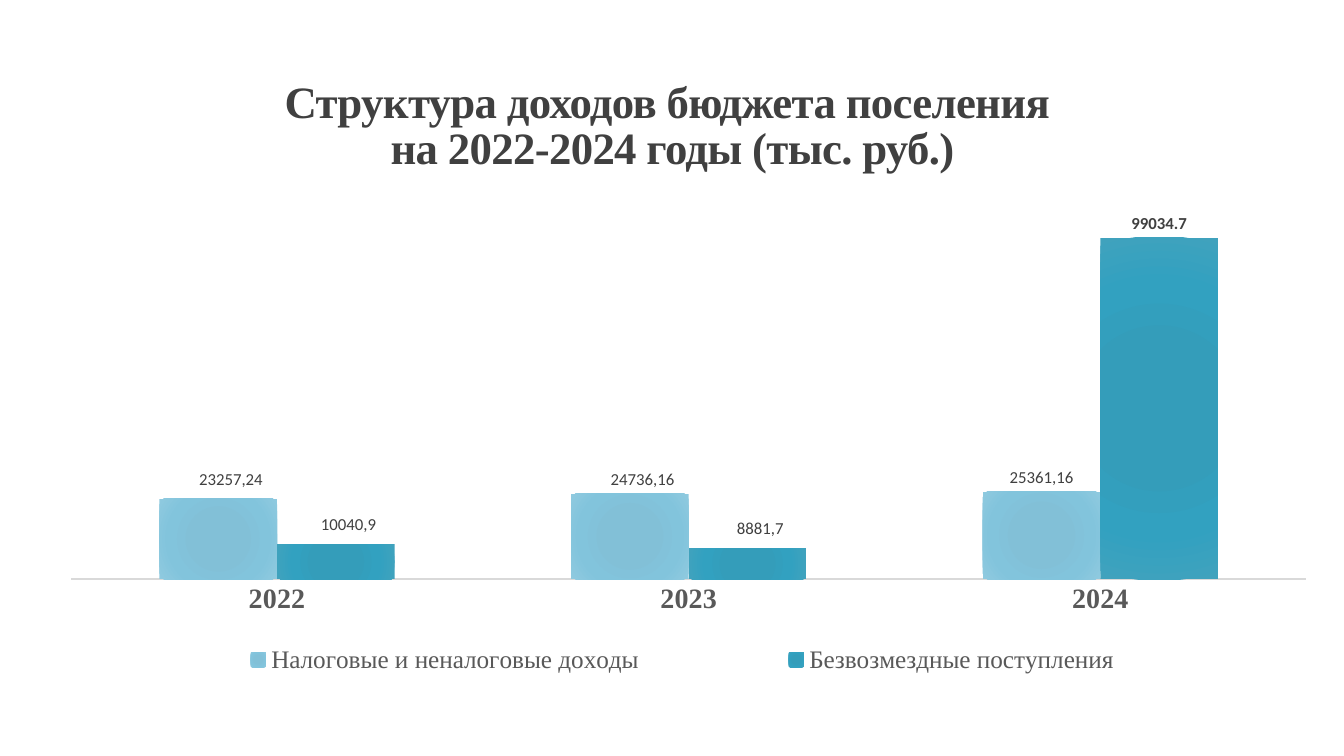
from dataclasses import dataclass

from lxml import etree
from pptx import Presentation
from pptx.chart.chart import Chart
from pptx.chart.data import CategoryChartData
from pptx.chart.series import BarSeries
from pptx.dml.color import RGBColor
from pptx.enum.chart import XL_CHART_TYPE, XL_LABEL_POSITION, XL_LEGEND_POSITION, XL_TICK_MARK
from pptx.enum.text import MSO_ANCHOR, PP_ALIGN
from pptx.oxml.ns import qn
from pptx.slide import Slide
from pptx.text.text import Font, TextFrame
from pptx.util import Pt

COLUMNS = XL_CHART_TYPE.COLUMN_CLUSTERED
OUTSIDE_END = XL_LABEL_POSITION.OUTSIDE_END
BOTTOM = XL_LEGEND_POSITION.BOTTOM
NO_TICKS = XL_TICK_MARK.NONE
ANCHOR_BOTTOM = MSO_ANCHOR.BOTTOM
CENTER = PP_ALIGN.CENTER

BLACK = RGBColor(0x00, 0x00, 0x00)
DARK_GRAY = RGBColor(0x40, 0x40, 0x40)
GRAY = RGBColor(0x59, 0x59, 0x59)
AXIS_GRAY = RGBColor(0xD9, 0xD9, 0xD9)
LIGHT_BLUES = (RGBColor(0x7F, 0xBF, 0xD6), RGBColor(0x82, 0xC0, 0xD7),
               RGBColor(0x82, 0xC4, 0xDC), RGBColor(0x8F, 0xCA, 0xDF))
DEEP_BLUES = (RGBColor(0x31, 0x9D, 0xBB), RGBColor(0x34, 0x9D, 0xBA),
              RGBColor(0x32, 0xA1, 0xC0), RGBColor(0x40, 0xA2, 0xBD))
GRADIENT_STOPS = (0, 34, 70, 100)

SERIF = "Times New Roman"
SANS = "Calibri"
YEARS = ("2022", "2023", "2024")
TITLE = "Структура доходов бюджета поселения \vна 2022-2024 годы (тыс. руб.)"


@dataclass(frozen=True)
class ValueLabel:
    """Custom label text and its shift as a share of the chart size."""
    text: str
    dx: float
    dy: float


@dataclass(frozen=True)
class Income:
    name: str
    values: tuple[float, ...]
    shades: tuple[RGBColor, ...]
    labels: tuple[ValueLabel, ...]


INCOMES = (
    Income("Налоговые и неналоговые доходы", (23257.24, 24736.16, 25361.16), LIGHT_BLUES,
           (ValueLabel("23257,24", 0.01, -0.01), ValueLabel("24736,16", 0.01, 0),
            ValueLabel("25361,16", 0, 0))),
    Income("Безвозмездные поступления", (10040.9, 8881.7, 99034.7), DEEP_BLUES,
           (ValueLabel("10040,9", 0.01, -0.01), ValueLabel("8881,7", 0.01, -0.01))),
)


def style_font(font: Font, size: float, name: str, color: RGBColor, bold: bool = False) -> None:
    font.size = Pt(size)
    font.name = name
    font.bold = bold
    font.color.rgb = color


def write_text(frame: TextFrame, text: str, *, size: float, name: str, color: RGBColor,
               bold: bool = False, line_spacing: float | None = None,
               tracking: float = 0) -> None:
    """Fill the frame with one centred paragraph; tracking is in points."""
    paragraph = frame.paragraphs[0]
    paragraph.text = text
    paragraph.alignment = CENTER
    if line_spacing:
        paragraph.line_spacing = line_spacing
    for run in paragraph.runs:
        style_font(run.font, size, name, color, bold)
        if tracking:
            run._r.get_or_add_rPr().set("spc", str(round(tracking * 100)))


def set_layout(parent: etree._Element, after: str, **settings: str | float) -> None:
    """Put a manual layout into a chart element, right after the named child."""
    for old in parent.findall(qn("c:layout")):
        parent.remove(old)
    layout = etree.Element(qn("c:layout"))
    manual = etree.SubElement(layout, qn("c:manualLayout"))
    for key, value in settings.items():
        etree.SubElement(manual, qn(f"c:{key}")).set("val", str(value))
    position = parent.index(parent.find(qn(after))) + 1 if after else 0
    parent.insert(position, layout)


def fill_radial(series: BarSeries, shades: tuple[RGBColor, ...]) -> None:
    series.format.fill.gradient()
    gradient = series._element.find(f"{qn('c:spPr')}/{qn('a:gradFill')}")
    for child in list(gradient):
        gradient.remove(child)
    stops = etree.SubElement(gradient, qn("a:gsLst"))
    for percent, shade in zip(GRADIENT_STOPS, shades):
        stop = etree.SubElement(stops, qn("a:gs"), pos=str(percent * 1000))
        etree.SubElement(stop, qn("a:srgbClr"), val=str(shade))
    circle = etree.SubElement(gradient, qn("a:path"), {"path": "circle"})
    etree.SubElement(circle, qn("a:fillToRect"), {side: "100000" for side in "ltrb"})


def style_series(series: BarSeries, income: Income) -> None:
    fill_radial(series, income.shades)
    series.format.line.fill.background()
    values = series.data_labels
    values.show_value = True
    values.position = OUTSIDE_END
    style_font(values.font, 12, SANS, DARK_GRAY, bold=True)
    for index, label in enumerate(income.labels):
        point_label = series.points[index].data_label
        write_text(point_label.text_frame, label.text, size=12, name=SANS, color=DARK_GRAY)
        point_label.position = OUTSIDE_END
    for element, label in zip(series._element.iter(qn("c:dLbl")), income.labels):
        set_layout(element, "c:idx", x=label.dx, y=label.dy)


def style_axes(chart: Chart) -> None:
    years = chart.category_axis
    years.major_tick_mark = NO_TICKS
    years.minor_tick_mark = NO_TICKS
    years.has_major_gridlines = False
    years.format.line.color.rgb = AXIS_GRAY
    years.format.line.width = Pt(1)
    style_font(years.tick_labels.font, 20, SERIF, GRAY, bold=True)
    amounts = chart.value_axis
    amounts.visible = False
    amounts.has_major_gridlines = False
    amounts.minimum_scale = 0
    amounts.maximum_scale = 120000


def add_income_chart(slide: Slide) -> None:
    data = CategoryChartData()
    data.categories = YEARS
    for income in INCOMES:
        data.add_series(income.name, income.values)
    chart = slide.shapes.add_chart(COLUMNS, Pt(41.8), Pt(106.6), Pt(909.4), Pt(383.8), data).chart
    chart.has_title = False
    style_font(chart.font, 10, SANS, BLACK)
    style_axes(chart)

    plot = chart.plots[0]
    plot.gap_width = 150
    plot.overlap = 0
    plot.vary_by_categories = False
    for series, income in zip(plot.series, INCOMES):
        style_series(series, income)

    chart.has_legend = True
    legend = chart.legend
    legend.position = BOTTOM
    legend.include_in_layout = False
    style_font(legend.font, 18, SERIF, GRAY)

    set_layout(legend._element, "c:legendPos", xMode="edge", yMode="edge",
               x=0.04, y=0.91, w=0.9, h=0.08)
    plot_area = plot._element.getparent()
    set_layout(plot_area, "", layoutTarget="inner", xMode="edge", yMode="edge",
               x=0.01, y=0.03, w=0.97, h=0.77)


def add_title(slide: Slide) -> None:
    frame = slide.shapes.add_textbox(Pt(72), Pt(49.7), Pt(816.5), Pt(77.8)).text_frame
    frame.word_wrap = True
    frame.vertical_anchor = ANCHOR_BOTTOM
    write_text(frame, TITLE, size=32, name=SERIF, color=DARK_GRAY, bold=True,
               line_spacing=0.85, tracking=-0.5)


def main() -> None:
    presentation = Presentation()
    presentation.slide_width = Pt(960)
    presentation.slide_height = Pt(540)
    slide = presentation.slides.add_slide(presentation.slide_layouts[6])
    add_title(slide)
    add_income_chart(slide)
    presentation.save("out.pptx")


if __name__ == "__main__":
    main()
